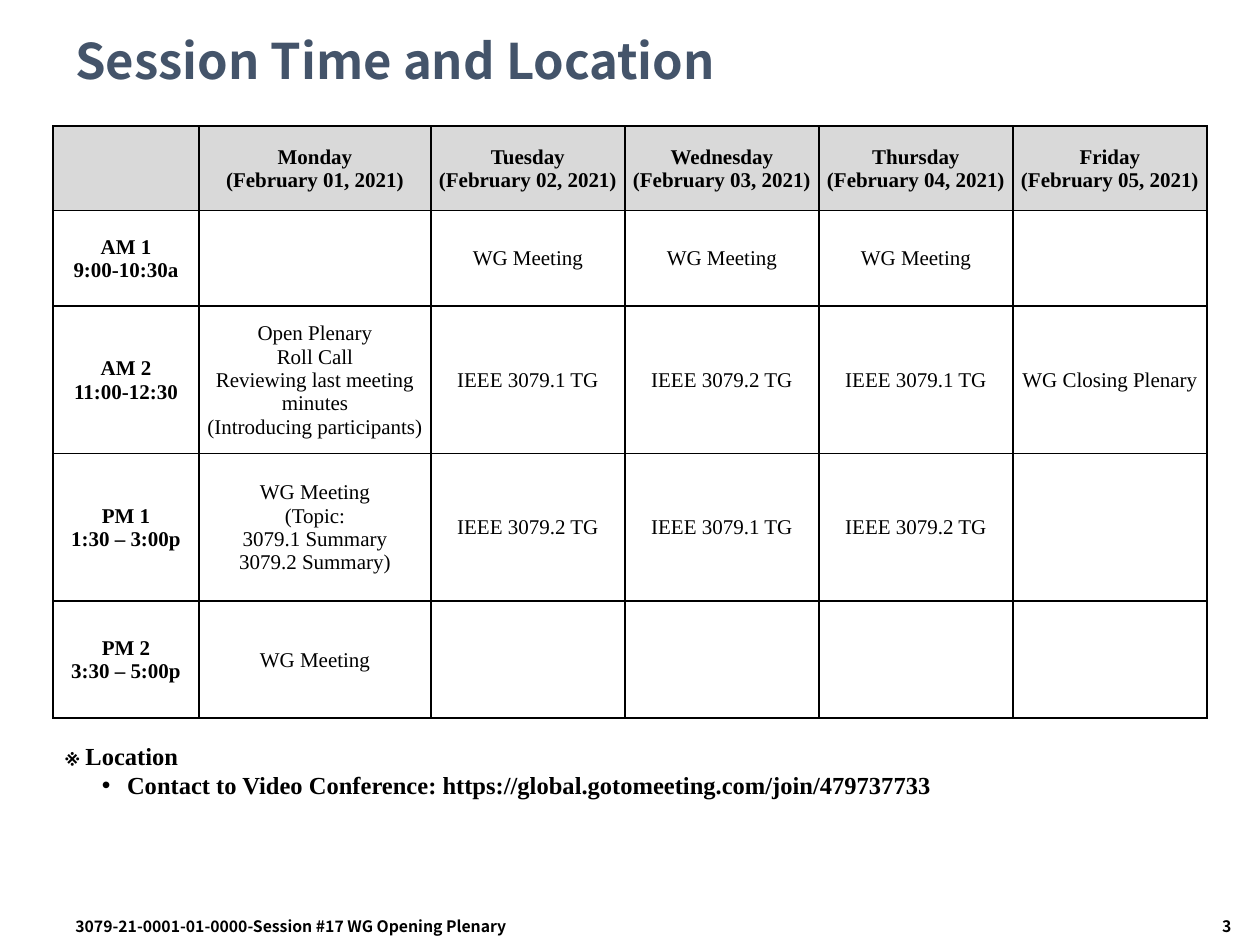
import lxml.etree
import pptx
import pptx.dml.color
import pptx.enum.text
import pptx.oxml.ns
import pptx.util

Inches = pptx.util.Inches
Pt = pptx.util.Pt
ALIGN = pptx.enum.text.PP_ALIGN
ANCHOR = pptx.enum.text.MSO_ANCHOR
qn = pptx.oxml.ns.qn

SLATE = pptx.dml.color.RGBColor(0x44, 0x54, 0x6A)
BLACK = pptx.dml.color.RGBColor(0, 0, 0)
GREY = pptx.dml.color.RGBColor(0xD9, 0xD9, 0xD9)
SANS = "Noto Sans CJK KR"
SERIF = "Times New Roman"


def write_text(frame, text, align, color, **formats):
    frame.text = text
    for para in frame.paragraphs:
        para.alignment = align
        for span in para.runs:
            span.font.color.rgb = color
            for name, value in formats.items():
                setattr(span.font, name, value)


def add_border(cell, side):
    line = lxml.etree.SubElement(cell._tc.get_or_add_tcPr(), qn("a:" + side), w=str(Pt(1)))
    fill = lxml.etree.SubElement(line, qn("a:solidFill"))
    lxml.etree.SubElement(fill, qn("a:srgbClr"), val=str(BLACK))


deck = pptx.Presentation()
deck.slide_width = Inches(10)
deck.slide_height = Inches(7.5)
page = deck.slides.add_slide(deck.slide_layouts[6])

texts = {
    "title": ("Session Time and Location", (0.5, 0.17, 9, 0.67), ALIGN.LEFT, SLATE, 28, SANS),
    "number": ("3", (8.25, 7.23, 1.62, 0.27), ALIGN.RIGHT, BLACK, 9, SANS),
    "location": (
        "※ Location\nContact to Video Conference: https://global.gotomeeting.com/join/479737733",
        (0.42, 5.83, 9.17, 0.57), ALIGN.LEFT, BLACK, 14, SERIF),
    "footer": ("3079-21-0001-01-0000-Session #17 WG Opening Plenary",
               (0.5, 7.23, 4.42, 0.27), ALIGN.LEFT, BLACK, 9, SANS),
}
frames = {}
for name, (text, place, align, color, size, font) in texts.items():
    box = page.shapes.add_textbox(*map(Inches, place))
    frames[name] = box.text_frame
    box.text_frame.word_wrap = True
    write_text(box.text_frame, text, align, color, size=Pt(size), name=font, bold=True)

frames["title"].vertical_anchor = ANCHOR.MIDDLE
frames["title"].paragraphs[0].line_spacing = 0.9

bullet = frames["location"].paragraphs[1]._p.get_or_add_pPr()
bullet.set("marL", str(Inches(0.49)))
bullet.set("indent", str(Inches(-0.2)))
lxml.etree.SubElement(bullet, qn("a:buFont"), typeface="Arial")
lxml.etree.SubElement(bullet, qn("a:buChar"), char="•")

days = ["Monday", "Tuesday", "Wednesday", "Thursday", "Friday"]
meeting = "WG Meeting"
group_1 = "IEEE 3079.1 TG"
group_2 = "IEEE 3079.2 TG"
schedule = [
    [""] + [f"{day}\n(February {date:02d}, 2021)" for date, day in enumerate(days, 1)],
    ["AM 1\n9:00-10:30a", "", meeting, meeting, meeting, ""],
    ["AM 2\n11:00-12:30",
     "Open Plenary\nRoll Call\nReviewing last meeting\vminutes\n(Introducing participants)",
     group_1, group_2, group_1, "WG Closing Plenary"],
    ["PM 1\n1:30 – 3:00p", "WG Meeting\n(Topic:\v3079.1 Summary\v3079.2 Summary)",
     group_2, group_1, group_2, ""],
    ["PM 2\n3:30 – 5:00p", meeting, "", "", "", ""],
]
widths = [1.16, 1.84] + [1.54] * 4
heights = [0.67, 0.76, 1.17, 1.17, 0.93]
cell_format = {
    "margin_left": Inches(0.01),
    "margin_right": Inches(0.01),
    "margin_top": Inches(0.01),
    "margin_bottom": 0,
    "vertical_anchor": ANCHOR.MIDDLE,
}

table = page.shapes.add_table(
    len(heights), len(widths), Inches(0.42), Inches(1),
    Inches(sum(widths)), Inches(sum(heights))).table
for column, width in zip(table.columns, widths):
    column.width = Inches(width)
for row, height in zip(table.rows, heights):
    row.height = Inches(height)

for row_index, entries in enumerate(schedule):
    for column_index, entry in enumerate(entries):
        cell = table.cell(row_index, column_index)
        for name, value in cell_format.items():
            setattr(cell, name, value)
        for side in ("lnL", "lnR", "lnT", "lnB"):
            add_border(cell, side)
        if row_index == 0:
            cell.fill.solid()
            cell.fill.fore_color.rgb = GREY
        else:
            cell.fill.background()
        write_text(cell.text_frame, entry, ALIGN.CENTER, BLACK, size=Pt(12), name=SERIF,
                   bold=row_index == 0 or column_index == 0)

deck.save("out.pptx")
